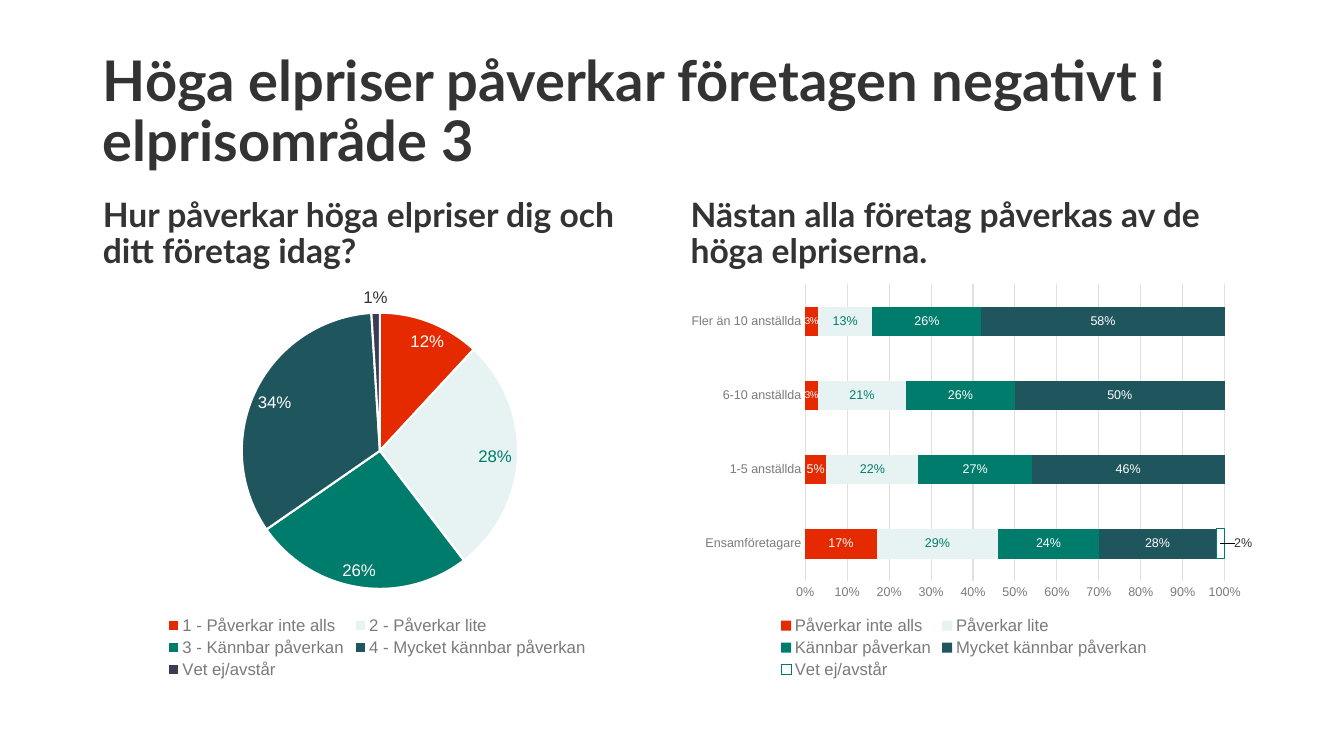
"""Build a slide on how electricity prices affect companies, with a pie and a stacked bar chart."""
from lxml import etree
from pptx import Presentation
from pptx.chart.data import CategoryChartData
from pptx.dml.color import RGBColor
from pptx.enum.chart import XL_CHART_TYPE as CT, XL_LABEL_POSITION as LP
from pptx.enum.chart import XL_LEGEND_POSITION as LEG, XL_TICK_MARK as TICK
from pptx.enum.text import MSO_ANCHOR as ANC, MSO_AUTO_SIZE as FIT, PP_ALIGN as AL
from pptx.oxml.ns import qn
from pptx.util import Inches, Pt

rgb = RGBColor.from_string
INK, GREY, GRID, WHITE = "333333", "7A7A7A", "E0E0E0", "FFFFFF"
RED, MINT, GREEN, TEAL, NAVY = "E52A00", "E6F3F2", "007C6C", "1F555C", "3A3C54"
LEFT, RIGHT = (0.92, 5.64), (6.75, 5.67)
C15 = "http://schemas.microsoft.com/office/drawing/2012/chart"


def style(font, size, color, name="Arial", bold=False):
    """Set the look of a font."""
    for key, value in dict(size=Pt(size), name=name, bold=bold).items():
        setattr(font, key, value)
    font.color.rgb = rgb(color)


def add_layout(parent, index, **values):
    """Give a chart part a manual layout."""
    old = parent.find(qn("c:layout"))
    if old is not None:
        parent.remove(old)
    layout = etree.Element(qn("c:layout"))
    manual = etree.SubElement(layout, qn("c:manualLayout"))
    for tag, value in values.items():
        etree.SubElement(manual, qn(f"c:{tag}")).set("val", str(value))
    parent.insert(index, layout)


prs = Presentation()
prs.slide_width, prs.slide_height = Inches(13.33), Inches(7.5)
s = prs.slides.add_slide(prs.slide_layouts[4])
ph = {p.placeholder_format.idx: p for p in s.placeholders}
for idx in (2, 4):
    ph[idx].element.getparent().remove(ph[idx].element)

for idx, text, (x, w), y, h, size, anchor in (
    (0, "Höga elpriser påverkar företagen negativt i elprisområde 3", (0.92, 11.5), 0.4, 1.45, 40, ANC.MIDDLE),
    (1, "Hur påverkar höga elpriser dig och ditt företag idag?", LEFT, 1.84, 0.9, 24, ANC.BOTTOM),
    (3, "Nästan alla företag påverkas av de höga elpriserna.", RIGHT, 1.84, 0.9, 24, ANC.BOTTOM),
):
    sp = ph[idx]
    for key, value in dict(left=x, top=y, width=w, height=h).items():
        setattr(sp, key, Inches(value))
    tf = sp.text_frame
    tf.text = text
    for key, value in dict(word_wrap=True, auto_size=FIT.NONE, vertical_anchor=anchor).items():
        setattr(tf, key, value)
    p = tf.paragraphs[0]
    for key, value in dict(alignment=AL.LEFT, line_spacing=0.9, space_before=Pt(0)).items():
        setattr(p, key, value)
    style(p.runs[0].font, size, INK, "Lato", True)

answers = ["Påverkar inte alls", "Påverkar lite", "Kännbar påverkan", "Mycket kännbar påverkan"]
pie_data = CategoryChartData(number_format="0%")
pie_data.categories = [f"{n} - {a}" for n, a in enumerate(answers, 1)] + ["Vet ej/avstår"]
pie_data.add_series("Series 1", (0.12, 0.28, 0.26, 0.34, 0.01))

bar_data = CategoryChartData(number_format="0%")
bar_data.categories = ["Ensamföretagare", "1-5 anställda", "6-10 anställda", "Fler än 10 anställda"]
shares = ((0.17, 0.05, 0.03, 0.03), (0.29, 0.22, 0.21, 0.13), (0.24, 0.27, 0.26, 0.26),
          (0.28, 0.46, 0.5, 0.58), (0.02, 0, 0, 0))
for name, values in zip(answers + ["Vet ej/avstår"], shares):
    bar_data.add_series(name, values)

charts = []
for kind, data, (x, w), area in (
    (CT.PIE, pie_data, LEFT, dict(x=0.26, y=0.09, w=0.49, h=0.68)),
    (CT.BAR_STACKED_100, bar_data, RIGHT, dict(x=0.22, y=0.02, w=0.74, h=0.73)),
):
    chart = s.shapes.add_chart(kind, Inches(x), Inches(2.74), Inches(w), Inches(4.03), data).chart
    style(chart.font, 10, INK)
    chart.has_title, chart.has_legend = False, True
    chart.legend.position, chart.legend.include_in_layout = LEG.BOTTOM, False
    style(chart.legend.font, 12, GREY)
    add_layout(chart._chartSpace.chart.plotArea, 0, layoutTarget="inner", xMode="edge", yMode="edge", **area)
    charts.append(chart)
pie, bar = (chart.plots[0] for chart in charts)

pie.vary_by_categories = True
slices = pie.series[0]
labels = slices.data_labels
for key, value in dict(show_value=True, show_percentage=False, number_format="0%",
                       number_format_is_linked=False, position=LP.BEST_FIT).items():
    setattr(labels, key, value)
style(labels.font, 12, WHITE)
for i, color in enumerate((RED, MINT, GREEN, TEAL, NAVY)):
    fmt = slices.points[i].format
    fmt.fill.solid()
    fmt.fill.fore_color.rgb = rgb(color)
    fmt.line.color.rgb = rgb(WHITE)
    fmt.line.width = Pt(1.5)
for i, color, position in ((1, GREEN, LP.INSIDE_END), (4, INK, LP.OUTSIDE_END)):
    label = slices.points[i].data_label
    style(label.font, 12, color)
    label.position = position

bar.gap_width, bar.overlap, bar.vary_by_categories = 150, 100, False
for ser, color, ink in zip(bar.series, (RED, MINT, GREEN, TEAL, WHITE), (WHITE, GREEN, WHITE, WHITE, WHITE)):
    ser.format.fill.solid()
    ser.format.fill.fore_color.rgb = rgb(color)
    labels = ser.data_labels
    for key, value in dict(show_value=True, number_format="0%;;", number_format_is_linked=False,
                           position=LP.CENTER).items():
        setattr(labels, key, value)
    style(labels.font, 9, ink)

for i in (2, 3):
    label = bar.series[0].points[i].data_label
    style(label.font, 7, WHITE)
    label.position = LP.CENTER

unsure = bar.series[4]
unsure.format.line.color.rgb = rgb(GREEN)
unsure.format.line.width = Pt(0.75)
style(unsure.points[0].data_label.font, 9, INK)
unsure_labels = unsure.data_labels._element
add_layout(unsure_labels.find(qn("c:dLbl")), 1, x=0.04, y=0)
ext = etree.SubElement(etree.SubElement(unsure_labels, qn("c:extLst")), qn("c:ext"), nsmap={"c15": C15})
ext.set("uri", "{CE6537A1-D6FC-4f65-9D91-7224C49458BB}")
etree.SubElement(ext, f"{{{C15}}}showLeaderLines").set("val", "0")

cat, val = charts[1].category_axis, charts[1].value_axis
for axis in (cat, val):
    axis.major_tick_mark = axis.minor_tick_mark = TICK.NONE
    style(axis.tick_labels.font, 9, GREY)
cat.has_major_gridlines, val.has_major_gridlines = False, True
for line in (cat.format.line, val.major_gridlines.format.line):
    line.color.rgb = rgb(GRID)
    line.width = Pt(0.75)
val.format.line.fill.background()
val.major_unit = 0.1
val.tick_labels.number_format, val.tick_labels.number_format_is_linked = "0%", False

prs.save("out.pptx")
